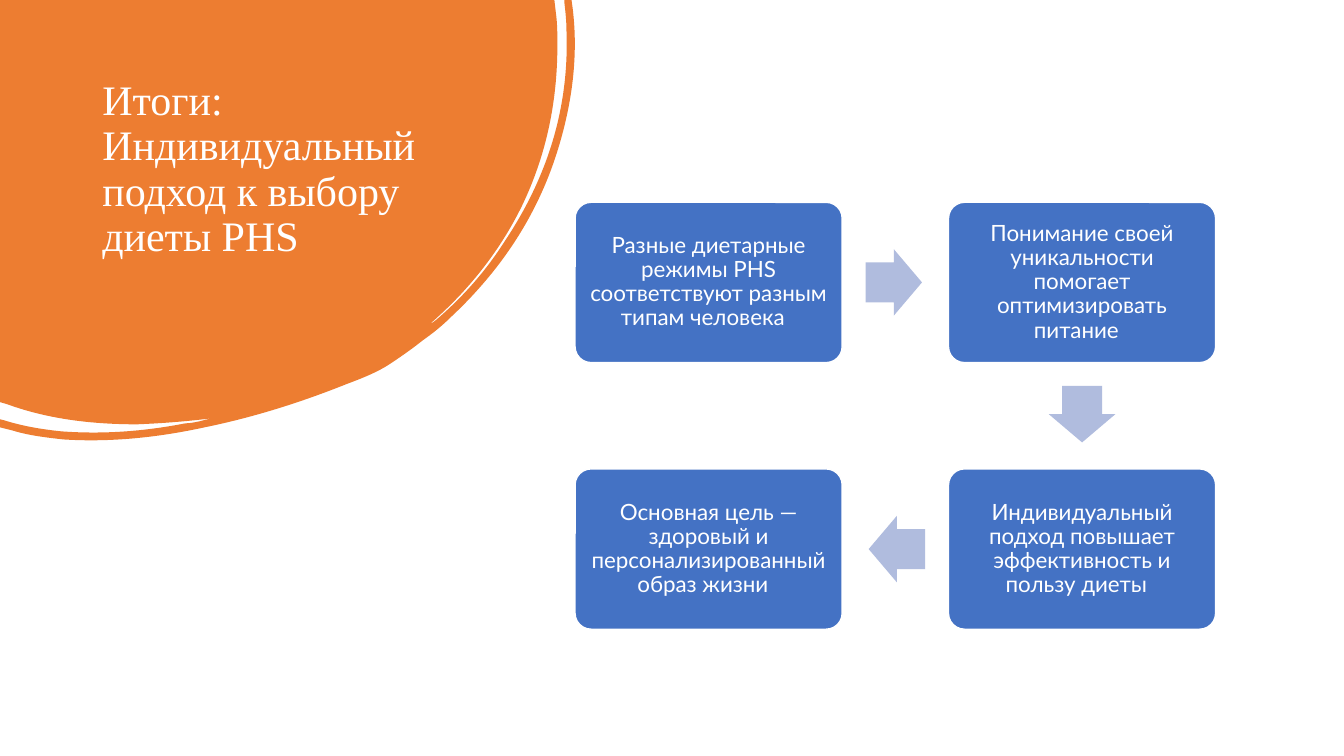
"""Build a summary slide: a curved title corner and a four-step flow of cards."""
import dataclasses
import itertools
import typing

import lxml.etree
import pptx
import pptx.dml.color
import pptx.enum.shapes
import pptx.enum.text
import pptx.oxml.ns
import pptx.util

COLS, ROWS = 1333.33, 750
UNIT = pptx.util.Inches(0.01)
FORM = pptx.enum.shapes.MSO_SHAPE
ALIGN = pptx.enum.text.PP_ALIGN
ANCHOR = pptx.enum.text.MSO_ANCHOR


@dataclasses.dataclass(frozen=True)
class Theme:
    wave: str = "ED7D31"
    card: str = "4472C4"
    arrow: str = "B0BCDE"
    white: str = "FFFFFF"
    serif: str = "Times New Roman"
    sans: str = "Lato"
    head: int = 30
    body: int = 16
    edge: int = 1


@dataclasses.dataclass(frozen=True)
class Step:
    col: int
    row: int
    words: str


@dataclasses.dataclass(frozen=True)
class Flow:
    left: float = 570.5
    top: float = 200.7
    wide: float = 265
    high: float = 159
    right: float = 370.5
    down: float = 264.5
    lag: float = 1.5

    def middle(self, step: Step) -> tuple[float, float]:
        return (self.left + step.col * self.right + self.wide / 2,
                self.top + step.row * self.down + self.high / 2)


THEME = Theme()
FLOW = Flow()
ARROW = (56, 66)
TITLE = (91.7, 73.5, 352, 222)
HEADING = "Итоги: Индивидуальный подход к выбору диеты PHS"
STEPS = [
    Step(0, 0, "Разные диетарные режимы PHS соответствуют разным типам человека  "),
    Step(1, 0, "Понимание своей уникальности помогает оптимизировать питание  "),
    Step(1, 1, "Индивидуальный подход повышает эффективность и пользу диеты  "),
    Step(0, 1, "Основная цель — здоровый и персонализированный образ жизни  "),
]
TURNS = {(1, 0): 0, (0, 1): 90, (-1, 0): 180}
CORNER = (571, 437)
WAVE = [
    (0, 0), (550, 0), (552, 17),
    (553, 26, 553, 36, 553, 45), (553, 101, 542, 154, 518, 204),
    (496, 249, 465, 288, 427, 321), (429, 321, 430, 319, 432, 318),
    (459, 295, 482, 269, 501, 239), (543, 176, 565, 107, 562, 30),
    (562, 21, 561, 12, 560, 3), (560, 0), (567, 0), (568, 7),
    (574, 54, 568, 102, 553, 150), (533, 214, 497, 268, 448, 314),
    (439, 323, 429, 331, 419, 338), (409, 346, 399, 353, 387, 361),
    (375, 369, 360, 375, 344, 381), (299, 399, 252, 414, 203, 424),
    (157, 434, 110, 439, 63, 436), (45, 434, 28, 432, 12, 427),
    (0, 424), (0, 416), (4, 417),
    (23, 423, 42, 426, 61, 428), (103, 431, 143, 428, 184, 420),
    (189, 420, 193, 419, 198, 418), (202, 417, 206, 416, 210, 415),
    (186, 418, 161, 420, 136, 421), (92, 421, 48, 416, 7, 401), (0, 399),
]


def span(size: float) -> pptx.util.Emu:
    return pptx.util.Emu(round(size * UNIT))


def tint(name: str) -> pptx.dml.color.RGBColor:
    return pptx.dml.color.RGBColor.from_string(name)


def paint(shape: typing.Any, fill: str, line: str | None = None) -> None:
    shape.shadow.inherit = False
    shape.fill.solid()
    shape.fill.fore_color.rgb = tint(fill)
    if line is None:
        shape.line.fill.background()
    else:
        shape.line.color.rgb = tint(line)
        shape.line.width = pptx.util.Pt(THEME.edge)


def write(shape: typing.Any, words: str, *, font: str, size: int,
          align: typing.Any, anchor: typing.Any, inset: tuple[float, float]) -> None:
    frame = shape.text_frame
    frame.word_wrap = True
    frame.vertical_anchor = anchor
    frame.margin_left = frame.margin_right = span(inset[0])
    frame.margin_top = frame.margin_bottom = span(inset[1])
    para = frame.paragraphs[0]
    para.alignment = align
    para.line_spacing = 0.9
    run = para.add_run()
    run.text = words
    run.font.name = font
    run.font.size = pptx.util.Pt(size)
    run.font.color.rgb = tint(THEME.white)


def place(slide: typing.Any, form: typing.Any, mid: tuple[float, float],
          size: tuple[float, float]) -> typing.Any:
    return slide.shapes.add_shape(
        form, span(mid[0] - size[0] / 2), span(mid[1] - size[1] / 2), *map(span, size))


def extend(node: typing.Any, tag: str, spots: tuple[int, ...] = ()) -> None:
    name = pptx.oxml.ns.qn
    part = lxml.etree.SubElement(node, name(tag))
    for x, y in zip(spots[::2], spots[1::2]):
        lxml.etree.SubElement(part, name("a:pt"), x=str(span(x)), y=str(span(y)))


def draw_wave(slide: typing.Any) -> None:
    wide, high = map(span, CORNER)
    pen = slide.shapes.build_freeform(0, 0)
    pen.add_line_segments([(wide, 0), (wide, high), (0, high)])
    wave = pen.convert_to_shape()
    outline = wave._element.find(".//" + pptx.oxml.ns.qn("a:path"))
    for node in list(outline):
        outline.remove(node)
    extend(outline, "a:moveTo", WAVE[0])
    for spots in WAVE[1:]:
        extend(outline, "a:lnTo" if len(spots) == 2 else "a:cubicBezTo", spots)
    extend(outline, "a:close")
    paint(wave, THEME.wave)


def draw_card(slide: typing.Any, step: Step) -> None:
    card = place(slide, FORM.ROUNDED_RECTANGLE, FLOW.middle(step), (FLOW.wide, FLOW.high))
    card.adjustments[0] = 0.1
    paint(card, THEME.card, THEME.white)
    write(card, step.words, font=THEME.sans, size=THEME.body,
          align=ALIGN.CENTER, anchor=ANCHOR.MIDDLE, inset=(7, 7))


def draw_arrow(slide: typing.Any, start: Step, end: Step) -> None:
    (x, y), (to_x, to_y) = FLOW.middle(start), FLOW.middle(end)
    turn = (end.col - start.col, end.row - start.row)
    mid = ((x + to_x) / 2 - turn[0] * FLOW.lag, (y + to_y) / 2 - turn[1] * FLOW.lag)
    arrow = place(slide, FORM.RIGHT_ARROW, mid, ARROW)
    arrow.adjustments[0] = 0.6
    arrow.adjustments[1] = 0.5
    arrow.rotation = TURNS[turn]
    paint(arrow, THEME.arrow)


def main() -> None:
    deck = pptx.Presentation()
    deck.slide_width, deck.slide_height = span(COLS), span(ROWS)
    slide = deck.slides.add_slide(deck.slide_layouts[6])
    draw_wave(slide)
    title = slide.shapes.add_textbox(*map(span, TITLE))
    write(title, HEADING, font=THEME.serif, size=THEME.head,
          align=ALIGN.LEFT, anchor=ANCHOR.TOP, inset=(10, 5))
    for step in STEPS:
        draw_card(slide, step)
    for start, end in itertools.pairwise(STEPS):
        draw_arrow(slide, start, end)
    deck.save("out.pptx")


if __name__ == "__main__":
    main()
